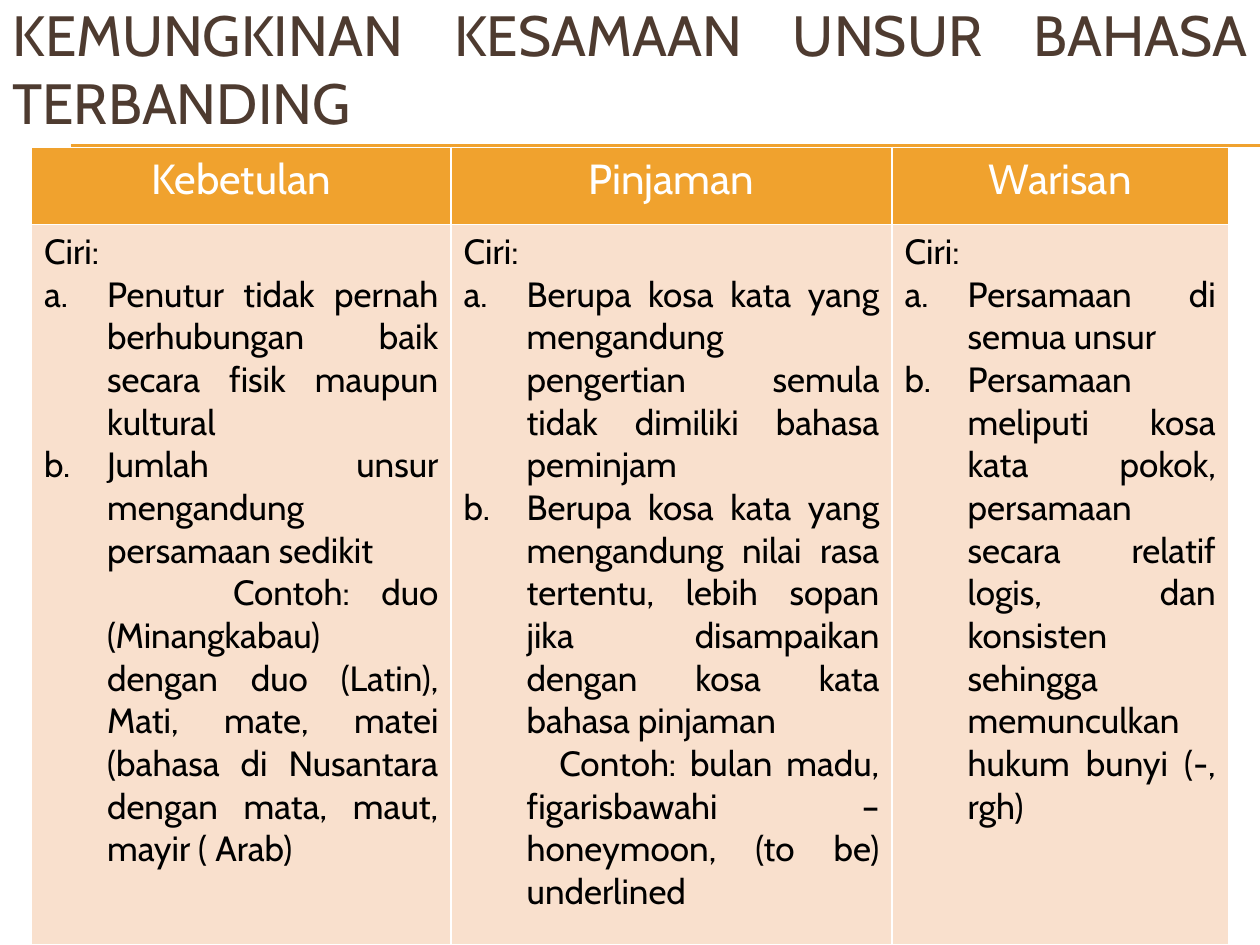
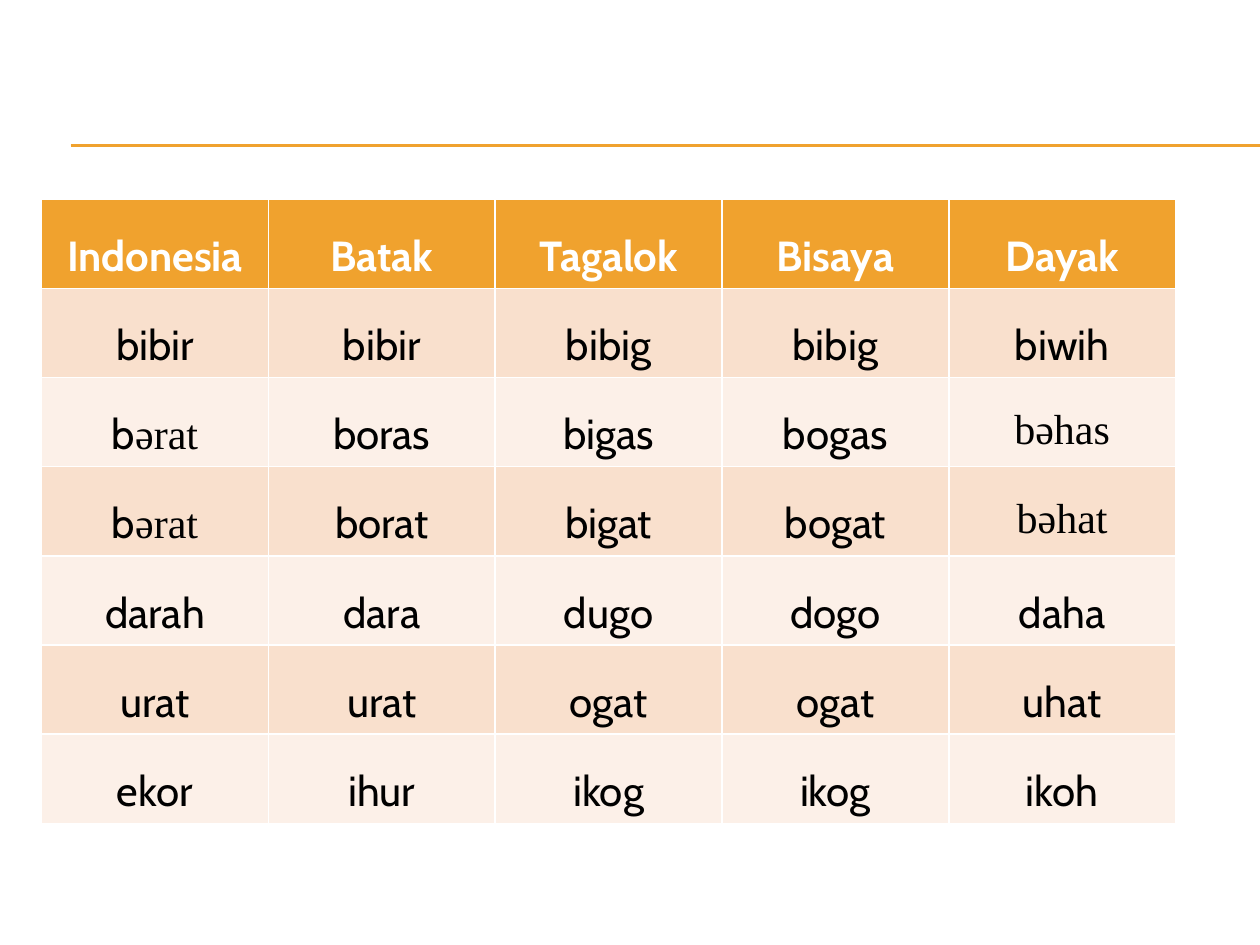
from pptx import Presentation
from pptx.dml.color import RGBColor
from pptx.enum.shapes import MSO_CONNECTOR
from pptx.enum.text import MSO_ANCHOR, PP_ALIGN
from pptx.oxml import parse_xml
from pptx.oxml.ns import nsdecls
from pptx.util import Inches, Pt
from lxml.etree import SubElement

ORANGE, BROWN, WHITE, BLACK = "F0A22E", "4E3B30", "FFFFFF", "000000"
PEACH, PALE = "F9E0CD", "FCF0E8"
SANS, SERIF = "Cabin", "Times New Roman"
A = "{http://schemas.openxmlformats.org/drawingml/2006/main}"


def add_run(paragraph, text, size, color, font=SANS, bold=False):
    run = paragraph.add_run()
    run.text = text
    run.font.size = Pt(size)
    run.font.name = font
    run.font.bold = bold
    run.font.color.rgb = RGBColor.from_string(color)


def style_cell(cell, fill):
    # White borders go before the fill in the cell properties
    properties = cell._tc.get_or_add_tcPr()
    for side in ("lnL", "lnR", "lnT", "lnB"):
        properties.append(parse_xml(
            f'<a:{side} {nsdecls("a")} w="12700"><a:solidFill>'
            f'<a:srgbClr val="{WHITE}"/></a:solidFill></a:{side}>'))
    cell.fill.solid()
    cell.fill.fore_color.rgb = RGBColor.from_string(fill)


prs = Presentation()
prs.slide_width, prs.slide_height = Inches(10), Inches(7.5)
similarity = prs.slides.add_slide(prs.slide_layouts[6])
cognates = prs.slides.add_slide(prs.slide_layouts[6])

# Double rule under the title area of both slides
for slide in (similarity, cognates):
    for y in (1.15, 1.16):
        rule = slide.shapes.add_connector(
            MSO_CONNECTOR.STRAIGHT, Inches(0.56), Inches(y), Inches(10), Inches(y))
        rule.line.color.rgb = RGBColor.from_string(ORANGE)
        rule.line.width = Pt(0.75)
        SubElement(rule._element.spPr, A + "effectLst")

# Slide 1: title
title = similarity.shapes.add_textbox(
    Inches(0), Inches(0.25), Inches(10), Inches(0.58)).text_frame
title.word_wrap = True
title.vertical_anchor = MSO_ANCHOR.MIDDLE
title.paragraphs[0].alignment = PP_ALIGN.JUSTIFY
add_run(title.paragraphs[0], "KEMUNGKINAN KESAMAAN UNSUR BAHASA TERBANDING", 32.4, BROWN)

# Slide 1: heading, width, features, example and its first-line indent
origins = [
    ("Kebetulan", 3.33,
     ["Penutur tidak pernah berhubungan baik secara fisik maupun kultural",
      "Jumlah unsur mengandung persamaan sedikit"],
     "Contoh: duo (Minangkabau) dengan duo (Latin), Mati, mate, matei "
     "(bahasa di Nusantara dengan mata, maut, mayir ( Arab)", 1),
    ("Pinjaman", 3.5,
     ["Berupa kosa kata yang mengandung pengertian semula tidak dimiliki bahasa peminjam",
      "Berupa kosa kata yang mengandung nilai rasa tertentu, lebih sopan jika "
      "disampaikan dengan kosa kata bahasa pinjaman"],
     "Contoh: bulan madu, figarisbawahi – honeymoon, (to be) underlined", 0.26),
    ("Warisan", 2.67,
     ["Persamaan di semua unsur",
      "Persamaan meliputi kosa kata pokok, persamaan secara relatif logis, dan "
      "konsisten sehingga memunculkan hukum bunyi (-, rgh)"],
     None, 0),
]
origin_table = similarity.shapes.add_table(
    2, len(origins), Inches(0.25), Inches(1.17), Inches(9.5), Inches(6.33)).table
origin_table.rows[0].height = Inches(0.61)
origin_table.rows[1].height = Inches(5.72)

for column, (heading, width, features, example, example_indent) in enumerate(origins):
    origin_table.columns[column].width = Inches(width)
    heading_cell = origin_table.cell(0, column)
    style_cell(heading_cell, ORANGE)
    heading_line = heading_cell.text_frame.paragraphs[0]
    heading_line.alignment = PP_ALIGN.CENTER
    add_run(heading_line, heading, 24, WHITE)

    feature_cell = origin_table.cell(1, column)
    style_cell(feature_cell, PEACH)
    intro = feature_cell.text_frame.paragraphs[0]
    intro.alignment = PP_ALIGN.JUSTIFY
    add_run(intro, "Ciri:", 20, BLACK)
    items = [(feature, -0.5, True) for feature in features]
    if example:
        items.append((example, example_indent, False))
    for text, indent, lettered in items:
        item = feature_cell.text_frame.add_paragraph()
        item.alignment = PP_ALIGN.JUSTIFY
        layout = item._p.get_or_add_pPr()
        layout.set("marL", str(Inches(0.5)))
        layout.set("indent", str(Inches(indent)))
        if lettered:
            SubElement(layout, A + "buFont", typeface="+mj-lt")
            SubElement(layout, A + "buAutoNum", type="alphaLcPeriod")
        add_run(item, text, 20, BLACK)

# Slide 2: cognate words by language
words = [
    ["Indonesia", "Batak", "Tagalok", "Bisaya", "Dayak"],
    ["bibir", "bibir", "bibig", "bibig", "biwih"],
    ["bǝrat", "boras", "bigas", "bogas", "bǝhas"],
    ["bǝrat", "borat", "bigat", "bogat", "bǝhat"],
    ["darah", "dara", "dugo", "dogo", "daha"],
    ["urat", "urat", "ogat", "ogat", "uhat"],
    ["ekor", "ihur", "ikog", "ikog", "ikoh"],
]
word_table = cognates.shapes.add_table(
    len(words), len(words[0]), Inches(0.33), Inches(1.58), Inches(9), Inches(4.9)).table

for row, entries in enumerate(words):
    is_header = row == 0
    fill = ORANGE if is_header else (PEACH if row % 2 else PALE)
    for column, word in enumerate(entries):
        cell = word_table.cell(row, column)
        style_cell(cell, fill)
        line = cell.text_frame.paragraphs[0]
        line.alignment = PP_ALIGN.CENTER
        line.line_spacing = 1.5
        line.space_after = Pt(6)
        # Words with a schwa use the serif font, from the schwa on in Indonesian
        if "ǝ" not in word:
            parts = [(word, SANS)]
        elif column == 0:
            parts = [(word[:1], SANS), (word[1:], SERIF)]
        else:
            parts = [(word, SERIF)]
        for text, font in parts:
            add_run(line, text, 24, WHITE if is_header else BLACK, font, is_header)

prs.save("out.pptx")
